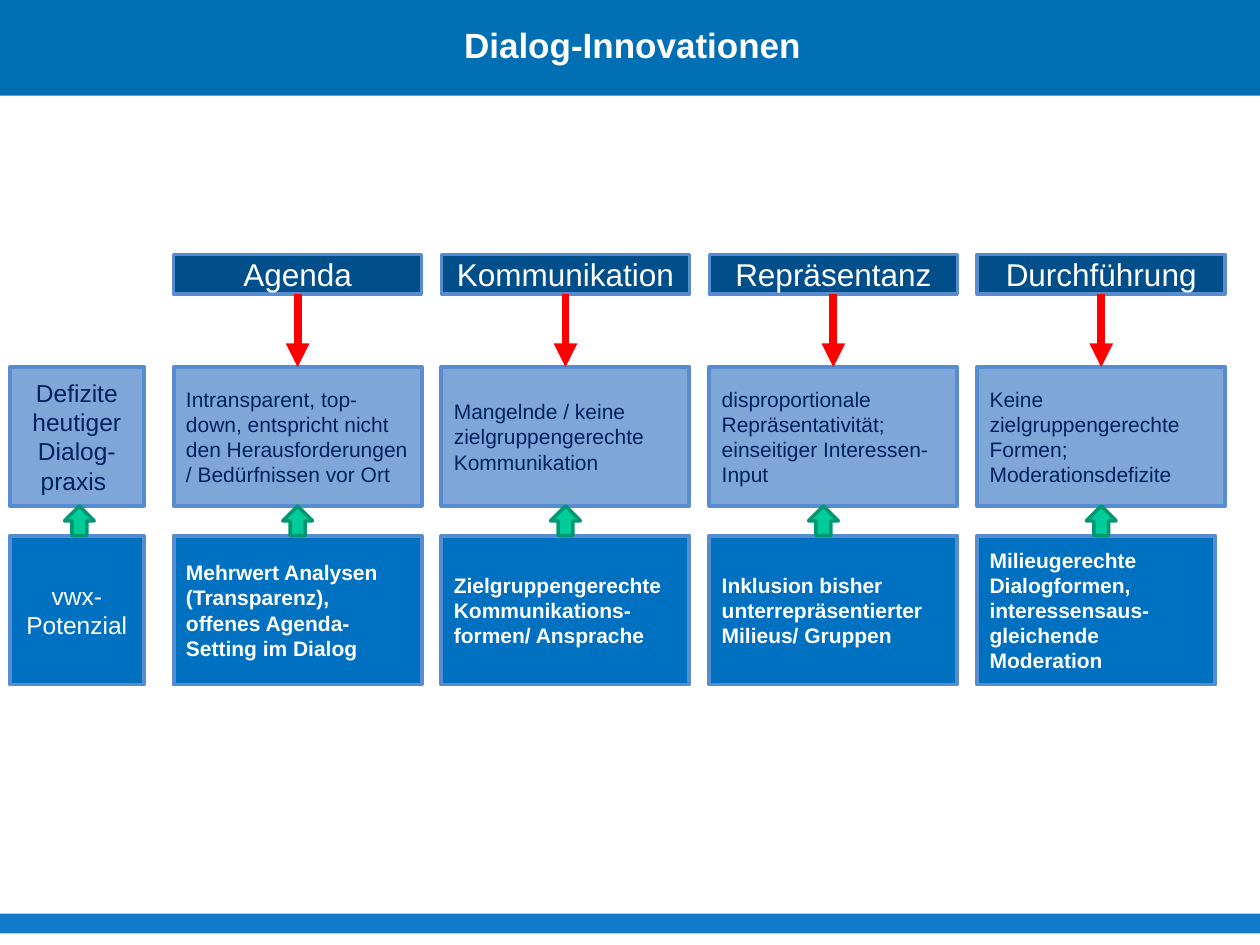
from pptx import Presentation
from pptx import util as u
from pptx.dml.color import RGBColor
from pptx.enum import shapes, text
from pptx.oxml import ns, xmlchemy

WHITE = RGBColor(0xFF, 0xFF, 0xFF)
NAVY = RGBColor(0x00, 0x20, 0x60)
HEADING = RGBColor(0x00, 0x4F, 0x8A)
BORDER = RGBColor(0x57, 0x8C, 0xD1)
DEFICIT = RGBColor(0x7E, 0xA7, 0xD8)
POTENTIAL = RGBColor(0x00, 0x70, 0xC0)
GREEN = RGBColor(0x00, 0xCC, 0x99)
DARK_GREEN = RGBColor(0x00, 0x97, 0x71)
RED = RGBColor(0xFF, 0x00, 0x00)
TOP_BAR = RGBColor(0x00, 0x6F, 0xB4)
BOTTOM_BAR = RGBColor(0x11, 0x7A, 0xCB)

LEFT, STEP, WIDTH = 3.5, 5.4, 5
LABEL_LEFT, LABEL_WIDTH = 0.2, 2.7
HEADING_TOP, HEADING_HEIGHT = 5.13, 0.8
DEFICIT_TOP, DEFICIT_HEIGHT = 7.4, 2.8
POTENTIAL_TOP, POTENTIAL_HEIGHT = 10.8, 3
ARROW_SIZE = 0.6

COLUMNS = [
    ("Agenda",
     "Intransparent, top-down, entspricht nicht den Herausforderungen / Bedürfnissen vor Ort",
     "Mehrwert Analysen (Transparenz), offenes Agenda-Setting im Dialog", WIDTH, 0),
    ("Kommunikation",
     "Mangelnde / keine zielgruppengerechte Kommunikation",
     "Zielgruppengerechte Kommunikations-formen/ Ansprache", WIDTH, 0),
    ("Repräsentanz",
     "disproportionale Repräsentativität; einseitiger Interessen-Input",
     "Inklusion bisher unterrepräsentierter Milieus/ Gruppen", WIDTH, -0.2),
    ("Durchführung",
     "Keine zielgruppengerechte Formen; Moderationsdefizite",
     "Milieugerechte Dialogformen, interessensaus-gleichende Moderation", 4.8, 0),
]


class Page:
    font = "Arial"

    def __init__(self, deck):
        self.slide = deck.slides.add_slide(deck.slide_layouts[5])
        self.shapes = self.slide.shapes

    def label(self, frame, words, size, color, bold=False, align=text.PP_ALIGN.LEFT):
        frame.word_wrap = True
        frame.vertical_anchor = text.MSO_ANCHOR.MIDDLE
        para = frame.paragraphs[0]
        para.alignment = align
        span = para.add_run()
        span.text = words
        span.font.color.rgb = color
        style = {"name": self.font, "size": u.Pt(size), "bold": bold}
        for key, value in style.items():
            setattr(span.font, key, value)

    def shape(self, left, top, width, height, fill, border=None, weight=2,
              kind=shapes.MSO_SHAPE.RECTANGLE):
        box = self.shapes.add_shape(kind, u.Cm(left), u.Cm(top), u.Cm(width), u.Cm(height))
        box.shadow.inherit = False
        box.fill.solid()
        box.fill.fore_color.rgb = fill
        if border is None:
            box.line.fill.background()
        else:
            box.line.color.rgb = border
            box.line.width = u.Pt(weight)
        return box

    def card(self, place, words, fill, size, color, weight=2.25, **style):
        box = self.shape(*place, fill, BORDER, weight)
        self.label(box.text_frame, words, size, color, **style)

    def up_arrow(self, center):
        self.shape(center - ARROW_SIZE / 2, DEFICIT_TOP + DEFICIT_HEIGHT, ARROW_SIZE, ARROW_SIZE,
                   GREEN, DARK_GREEN, kind=shapes.MSO_SHAPE.UP_ARROW)

    def down_line(self, center, top, bottom):
        arrow = self.shapes.add_connector(shapes.MSO_CONNECTOR.STRAIGHT, u.Cm(center), u.Cm(top),
                                          u.Cm(center), u.Cm(bottom))
        arrow.line.color.rgb = RED
        arrow.line.width = u.Pt(4.5)
        tip = xmlchemy.OxmlElement("a:tailEnd")
        tip.set("type", "triangle")
        properties = arrow._element.find(ns.qn("p:spPr"))
        properties.find(ns.qn("a:ln")).append(tip)
        properties.append(xmlchemy.OxmlElement("a:effectLst"))

    def title(self, words, left, top, width, height):
        box = self.shapes.title
        place = {"left": left, "top": top, "width": width, "height": height}
        for key, value in place.items():
            setattr(box, key, u.Cm(value))
        self.label(box.text_frame, words, 20, WHITE, bold=True)
        box._element.getparent().append(box._element)


def main():
    deck = Presentation()
    deck.slide_width, deck.slide_height = u.Cm(25.4), u.Cm(19.05)
    page = Page(deck)
    center = text.PP_ALIGN.CENTER

    page.shape(0, 18.42, 25.4, 0.4, BOTTOM_BAR)
    page.shape(0, 0, 25.4, 1.93, TOP_BAR)
    page.title("Dialog-Innovationen", 9.1, 0.33, 14.6, 1.12)

    page.card((LABEL_LEFT, DEFICIT_TOP, LABEL_WIDTH, DEFICIT_HEIGHT),
              "Defizite heutiger Dialog-praxis ", DEFICIT, 14, NAVY, align=center)
    page.card((LABEL_LEFT, POTENTIAL_TOP, LABEL_WIDTH, POTENTIAL_HEIGHT),
              "vwx-Potenzial", POTENTIAL, 14, WHITE, align=center)
    page.up_arrow(LABEL_LEFT + LABEL_WIDTH / 2 + 0.05)

    for index, (heading, deficit, potential, potential_width, shift) in enumerate(COLUMNS):
        left = LEFT + index * STEP
        middle = left + WIDTH / 2
        page.card((left, HEADING_TOP, WIDTH, HEADING_HEIGHT), heading, HEADING, 18, WHITE,
                  weight=2, align=center)
        page.card((left, DEFICIT_TOP, WIDTH, DEFICIT_HEIGHT), deficit, DEFICIT, 12, NAVY)
        page.card((left, POTENTIAL_TOP, potential_width, POTENTIAL_HEIGHT), potential,
                  POTENTIAL, 12, WHITE, bold=True)
        page.up_arrow(middle + shift)
        page.down_line(middle, HEADING_TOP + HEADING_HEIGHT, DEFICIT_TOP)

    deck.save("out.pptx")


if __name__ == "__main__":
    main()
